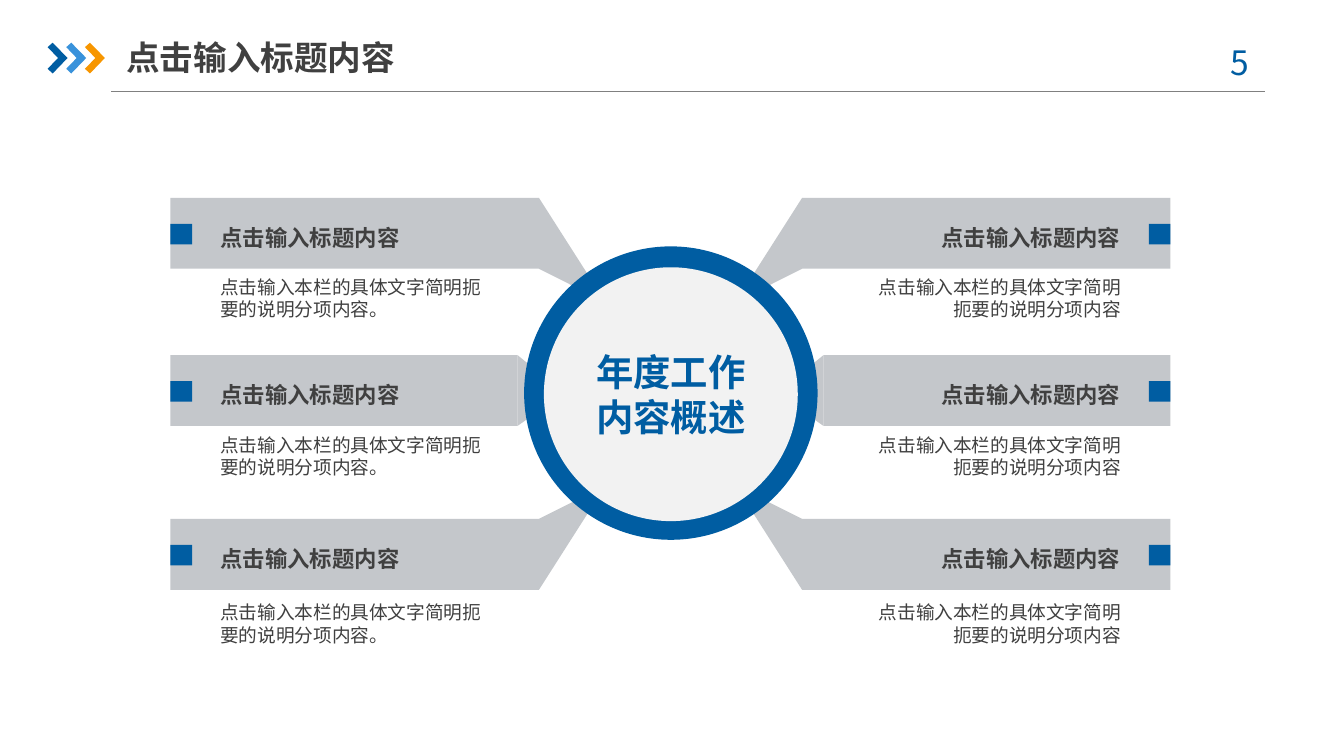
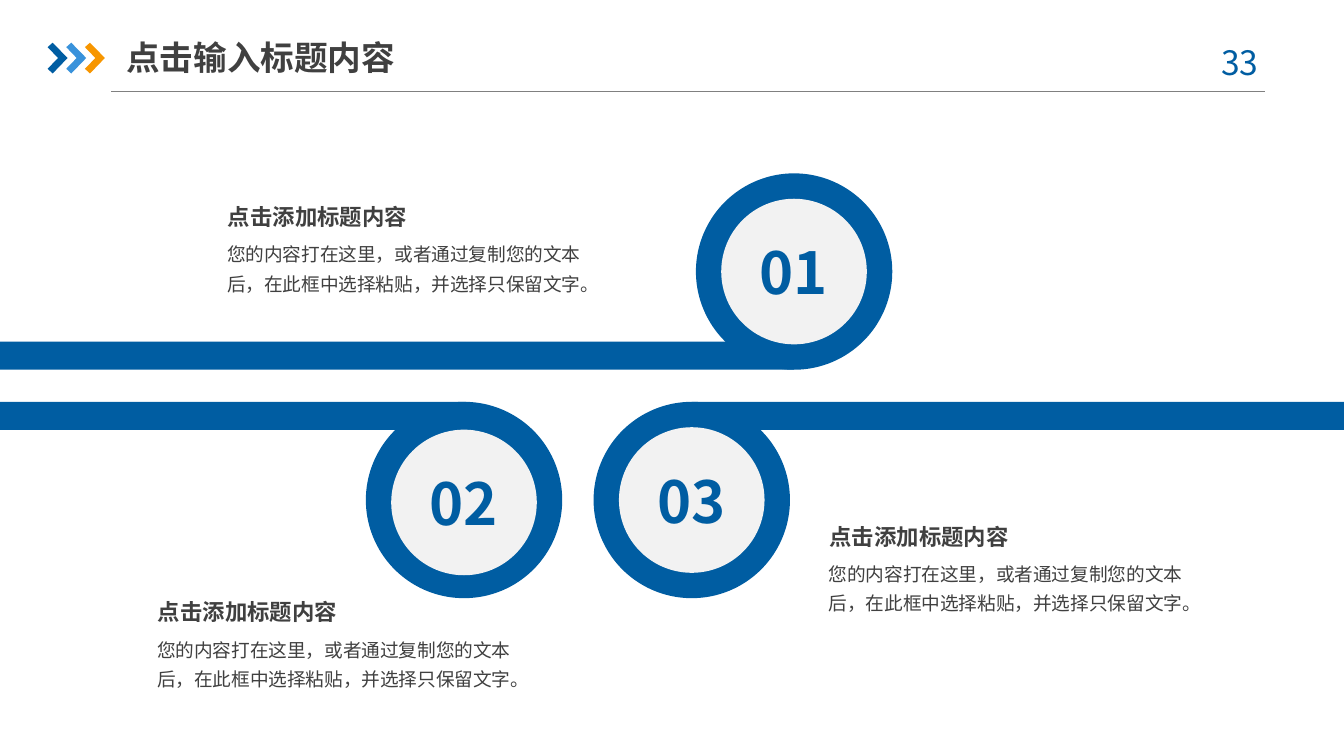
from dataclasses import dataclass

from lxml import etree
from pptx import Presentation
from pptx.dml.color import RGBColor
from pptx.enum.shapes import MSO_CONNECTOR, MSO_SHAPE
from pptx.enum.text import MSO_ANCHOR, PP_ALIGN
from pptx.oxml.ns import qn
from pptx.util import Pt

RECTANGLE, ELLIPSE = MSO_SHAPE.RECTANGLE, MSO_SHAPE.OVAL
STRAIGHT = MSO_CONNECTOR.STRAIGHT
LEFT, CENTER, RIGHT = PP_ALIGN.LEFT, PP_ALIGN.CENTER, PP_ALIGN.RIGHT
TOP, MIDDLE = MSO_ANCHOR.TOP, MSO_ANCHOR.MIDDLE


@dataclass(frozen=True)
class Theme:
    font: str = "Noto Sans CJK SC"
    blue: str = "005DA2"
    sky: str = "3992DB"
    orange: str = "F79600"
    ribbon: str = "C4C7CB"
    disc: str = "F2F2F2"
    ink: str = "404040"
    rule: str = "808080"
    title: int = 18
    heading: int = 12
    body: int = 10
    center: int = 20
    number: int = 31


theme = Theme()


def add_filled(slide, color, geometry, kind=None):
    """Add a preset shape from a box, or a polygon from its corner points."""
    if kind is None:
        corners = [(Pt(x), Pt(y)) for x, y in geometry]
        builder = slide.shapes.build_freeform(*corners[0])
        builder.add_line_segments(corners[1:], close=True)
        shape = builder.convert_to_shape()
    else:
        shape = slide.shapes.add_shape(kind, *map(Pt, geometry))
    shape.shadow.inherit = False
    shape.fill.solid()
    shape.fill.fore_color.rgb = RGBColor.from_string(color)
    shape.line.fill.background()
    return shape


def write_text(shape, text, size, color=theme.ink, bold=False, align=LEFT,
               anchor=TOP, insets=(0, 3.6), spacing=None, wrap=True):
    """Write one paragraph per line, with (side, top and bottom) insets."""
    frame = shape.text_frame
    frame.word_wrap = wrap
    frame.vertical_anchor = anchor
    frame.margin_left = frame.margin_right = Pt(insets[0])
    frame.margin_top = frame.margin_bottom = Pt(insets[1])
    frame.text = text
    for paragraph in frame.paragraphs:
        paragraph.alignment = align
        paragraph.line_spacing = spacing
        font = paragraph.font
        font.size, font.bold, font.name = Pt(size), bold, theme.font
        font.color.rgb = RGBColor.from_string(color)
        properties = paragraph._p.pPr.find(qn("a:defRPr"))
        etree.SubElement(properties, qn("a:ea"), typeface=theme.font)


presentation = Presentation()
presentation.slide_width, presentation.slide_height = Pt(720), Pt(405)

# Shared header: chevrons, rule, title and page number
chevron = [(25.5, 25.3), (28.2, 22.9), (36.2, 31.1),
           (28.2, 39.4), (25.5, 36.9), (31.1, 31.1)]
slides = []
for page_number in ("5", "33"):
    slide = presentation.slides.add_slide(presentation.slide_layouts[6])
    slides.append(slide)
    rule = slide.shapes.add_connector(STRAIGHT, Pt(59.5), Pt(49.2), Pt(677.5), Pt(49.2))
    rule.line.color.rgb = RGBColor.from_string(theme.rule)
    rule.line.width = Pt(0.75)
    etree.SubElement(rule._element.spPr, qn("a:effectLst"))
    for index, color in enumerate((theme.blue, theme.sky, theme.orange)):
        add_filled(slide, color, [(x + 10 * index, y) for x, y in chevron])
    page_box = slide.shapes.add_textbox(Pt(638), Pt(18.7), Pt(52.5), Pt(29))
    write_text(page_box, page_number, theme.title, theme.blue, align=CENTER, insets=(7.2, 3.6))
    title_box = slide.shapes.add_textbox(Pt(67.7), Pt(15.8), Pt(168), Pt(30))
    write_text(title_box, "点击输入标题内容", theme.title, bold=True, anchor=MIDDLE)

overview, steps = slides

# Overview: three ribbons, mirrored about the axis of the central circle
axis, bar_left, bar_height = 359.2, 91.3, 38
text_left, heading_width = 118.1, 154
slanted_tail = [(288.7, 0), (319, 47.5), (314.8, 51.1), (288.7, bar_height)]
middle_tail = [(277.2, 0), (297.4, 16.5), (297.4, 23.8), (277.2, bar_height)]
raised_tail = [(x, bar_height - y) for x, y in slanted_tail]
ribbons = [(106, 154.8, slanted_tail), (190.2, 239.2, middle_tail), (278, 329, raised_tail)]
sides = [
    (False, LEFT, 139.7, "点击输入本栏的具体文字简明扼要的说明分项内容。"),
    (True, RIGHT, 132.5, "点击输入本栏的具体文字简明扼要的说明分项内容"),
]
for mirrored, align, body_width, body in sides:
    for bar_top, body_top, tail in ribbons:
        bar_width = tail[0][0] - bar_left
        parts = {"bar": (bar_left, bar_width), "marker": (bar_left, 11.6),
                 "heading": (text_left, heading_width), "body": (text_left, body_width)}
        outline = [(x, bar_top + y) for x, y in tail]
        if mirrored:
            parts = {name: (2 * axis - x - width, width) for name, (x, width) in parts.items()}
            outline = [(2 * axis - x, y) for x, y in outline]
        bar_x, bar_width = parts["bar"]
        add_filled(overview, theme.ribbon, (bar_x, bar_top, bar_width, bar_height), RECTANGLE)
        add_filled(overview, theme.ribbon, outline)
        marker_x, marker_width = parts["marker"]
        add_filled(overview, theme.blue, (marker_x, bar_top + 14, marker_width, 11), RECTANGLE)
        heading_x, _ = parts["heading"]
        heading_box = overview.shapes.add_textbox(
            Pt(heading_x), Pt(bar_top + 10.6), Pt(heading_width), Pt(22.3))
        write_text(heading_box, "点击输入标题内容", theme.heading, bold=True, align=align)
        body_x, _ = parts["body"]
        body_box = overview.shapes.add_textbox(Pt(body_x), Pt(body_top), Pt(body_width), Pt(10))
        write_text(body_box, body, theme.body, align=align, anchor=MIDDLE)

# Overview: central circle
add_filled(overview, theme.blue, (280.8, 132, 157.2, 157.2), ELLIPSE)
center_disc = add_filled(overview, theme.disc, (291.4, 143.2, 136, 136), ELLIPSE)
write_text(center_disc, "年度工作\n内容概述", theme.center, theme.blue, bold=True,
           align=CENTER, anchor=MIDDLE, insets=(7.2, 3.6))

# Steps: each bar runs from a slide edge to the centre of its ring
ring, disc, bar_thickness = 105.2, 78, 15
step_rings = [
    # number, ring centre, disc drop, bar start and end, bar top
    ("02", 248.6, 267.9, 1.3, 0, 249.8, 215.3),
    ("01", 425.4, 145.5, 0, 0, 425.4, 183),
    ("03", 370.6, 267.9, 0, 370.6, 720, 215.3),
]
for number, x, y, drop, bar_start, bar_end, bar_top in step_rings:
    add_filled(steps, theme.blue,
               (bar_start, bar_top, bar_end - bar_start, bar_thickness), RECTANGLE)
    add_filled(steps, theme.blue, (x - ring / 2, y - ring / 2, ring, ring), ELLIPSE)
    number_disc = add_filled(
        steps, theme.disc, (x - disc / 2, y - disc / 2 + drop, disc, disc), ELLIPSE)
    write_text(number_disc, number, theme.number, theme.blue, bold=True,
               align=CENTER, anchor=MIDDLE, insets=(7.2, 3.2))

# Steps: heading and body of each note
step_body = "您的内容打在这里，或者通过复制您的文本后，在此框中选择粘贴，并选择只保留文字。"
note_insets = (5.76, 2.88)
for left, top in ((116.4, 105.8), (78.9, 317.5), (438.7, 277.2)):
    body_box = steps.shapes.add_textbox(Pt(left - 0.5), Pt(top + 18), Pt(206), Pt(37.4))
    write_text(body_box, step_body, theme.body, insets=note_insets, spacing=1.3)
    heading_box = steps.shapes.add_textbox(Pt(left), Pt(top), Pt(108), Pt(20.2))
    write_text(heading_box, "点击添加标题内容", theme.heading, bold=True,
               insets=note_insets, wrap=False)

presentation.save("out.pptx")
